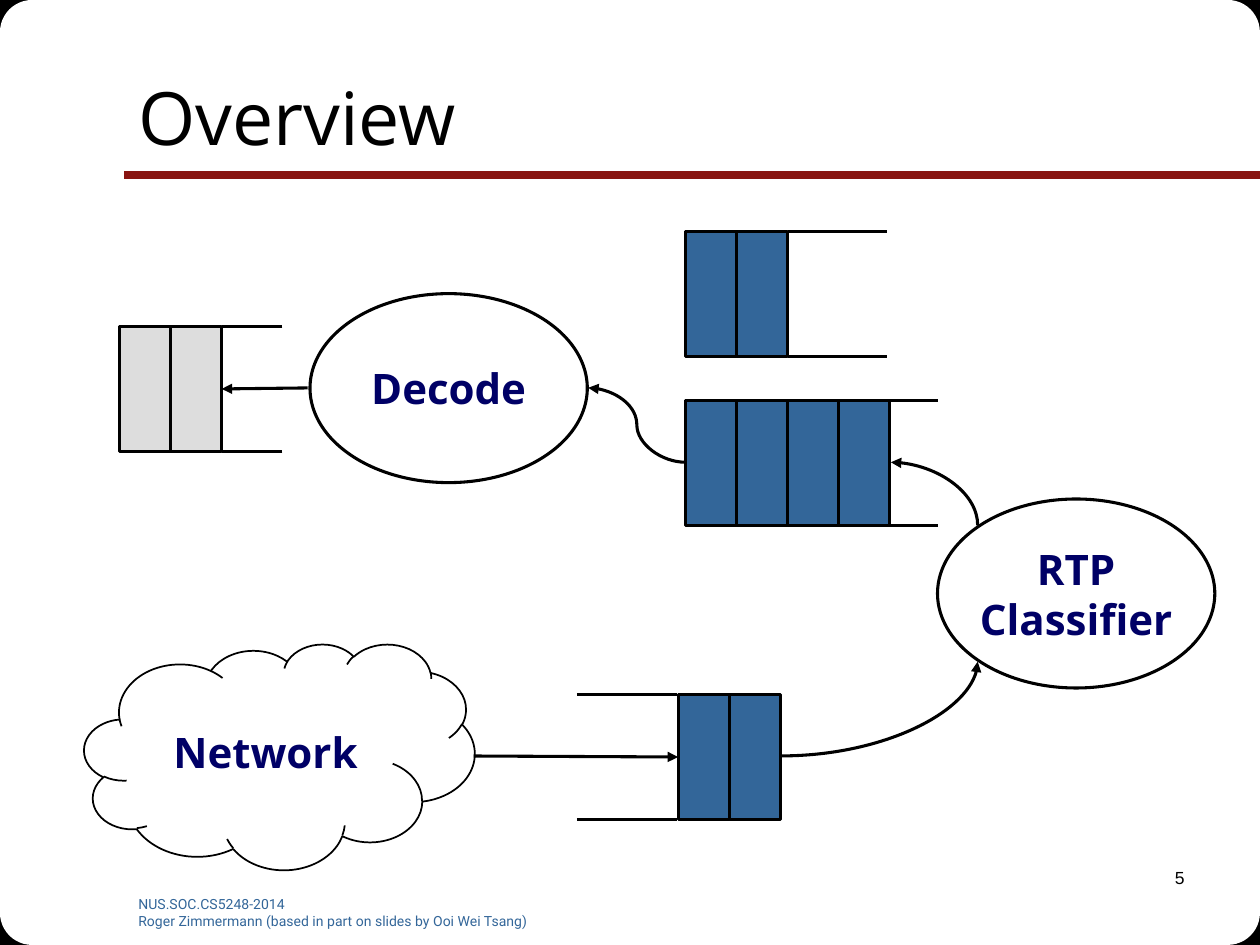
"""Build the overview slide: packets queue from the network to the decoder."""
from itertools import product

from lxml import etree
from pptx import Presentation
from pptx.dml.color import RGBColor
from pptx.enum.shapes import MSO_CONNECTOR, MSO_SHAPE
from pptx.enum.text import MSO_ANCHOR, PP_ALIGN
from pptx.oxml.ns import qn
from pptx.util import Cm, Pt

STRAIGHT, CURVE = MSO_CONNECTOR.STRAIGHT, MSO_CONNECTOR.CURVE
RECT, ROUND = MSO_SHAPE.RECTANGLE, MSO_SHAPE.ROUNDED_RECTANGLE
OVAL, CLOUD = MSO_SHAPE.OVAL, MSO_SHAPE.CLOUD
LEFT, CENTER, RIGHT = PP_ALIGN.LEFT, PP_ALIGN.CENTER, PP_ALIGN.RIGHT
TOP, MIDDLE = MSO_ANCHOR.TOP, MSO_ANCHOR.MIDDLE
HEX = {"black": "000000", "white": "FFFFFF", "red": "891411",
       "blue": "336699", "navy": "000066", "gray": "DDDDDD"}
COLOR = {name: RGBColor.from_string(code) for name, code in HEX.items()}
WIDE, HIGH = 25.4, 19.05

deck = Presentation()
deck.slide_width, deck.slide_height = Cm(WIDE), Cm(HIGH)
shapes = deck.slides.add_slide(deck.slide_layouts[6]).shapes


def draw(kind, x, y, w, h, fill, weight=1.75):
    shape = shapes.add_shape(kind, Cm(x), Cm(y), Cm(w), Cm(h))
    shape.shadow.inherit = False
    shape.fill.solid()
    shape.fill.fore_color.rgb = COLOR[fill]
    if weight:
        shape.line.color.rgb = COLOR["black"]
        shape.line.width = Pt(weight)
    else:
        shape.line.fill.background()
    return shape


def link(kind, x1, y1, x2, y2, end=None, color="black", weight=1.75):
    wire = shapes.add_connector(kind, Cm(x1), Cm(y1), Cm(x2), Cm(y2))
    wire.line.color.rgb = COLOR[color]
    wire.line.width = Pt(weight)
    if end:
        etree.SubElement(wire.line._ln, qn(f"a:{end}"), type="triangle")
    etree.SubElement(wire._element.spPr, qn("a:effectLst"))
    return wire


for kind, size, fill, weight in ((RECT, 1.1, "black", 0.75), (ROUND, 3.89, "white", 0)):
    for x, y in product((0, WIDE - size), (0, HIGH - size)):
        draw(kind, x, y, size, size, fill, weight)
link(STRAIGHT, WIDE, 3.53, 2.49, 3.53, color="red", weight=4.5)

cell_w, cell_h = 1.03, 2.52
queues = {
    "out": (2.41, 6.58, 2, "gray", 4.47, 5.69),
    "input": (13.67, 14, 2, "blue", 13.64, 11.63),
    "long": (13.82, 8.08, 4, "blue", 16.89, 18.9),
    "short": (13.82, 4.67, 2, "blue", 15.88, 17.88),
}
cells = {}
for name, (x, y, count, fill, near, far) in queues.items():
    for rail in (y, y + cell_h):
        link(STRAIGHT, far, rail, near, rail)
    cells[name] = [draw(RECT, x + i * cell_w, y, cell_w, cell_h, fill)
                   for i in range(count)]

nodes = (
    (CLOUD, 1.7, 12.98, 7.87, 4.55, 1, ["Network"]),
    (OVAL, 18.9, 10.06, 5.59, 3.81, 1.75, ["RTP", "Classifier"]),
    (OVAL, 6.25, 5.92, 5.59, 3.81, 1.75, ["Decode"]),
)
texts = [
    (shapes.add_textbox(Cm(2.54), Cm(0.76), Cm(21.59), Cm(3.18)),
     ["Overview"], "Open Sans", 42, "black", LEFT, MIDDLE),
    (shapes.add_textbox(Cm(2.54), Cm(17.93), Cm(8.69), Cm(0.71)),
     ["NUS.SOC.CS5248-2014",
      "Roger Zimmermann (based in part on slides by Ooi Wei Tsang)"],
     "Roboto", 8, "blue", LEFT, TOP),
    (shapes.add_textbox(Cm(18.85), Cm(17.35), Cm(5.28), Cm(1.27)),
     ["5"], "Arial", 10, "black", RIGHT, TOP),
]
for kind, x, y, w, h, weight, words in nodes:
    node = draw(kind, x, y, w, h, "white", weight)
    texts.append((node, words, "Open Sans", 24, "navy", CENTER, MIDDLE))

for shape, words, face, size, color, align, anchor in texts:
    frame = shape.text_frame
    frame.word_wrap = align != CENTER
    frame.vertical_anchor = anchor
    frame.text = "\n".join(words)
    for para in frame.paragraphs:
        para.alignment = align
        para.font.name, para.font.size = face, Pt(size)
        para.font.bold = align == CENTER
        para.font.color.rgb = COLOR[color]

link(STRAIGHT, 9.55, 15.24, 13.64, 15.24, "tailEnd").end_connect(cells["input"][0], 1)
link(STRAIGHT, 6.2, 7.82, 4.5, 7.82, "tailEnd").end_connect(cells["out"][-1], 3)
link(CURVE, 13.82, 9.32, 11.86, 7.82, "tailEnd")
bends = (
    link(CURVE, 15.75, 15.24, 19.71, 13.34, "tailEnd"),
    link(CURVE, 17.96, 9.32, 19.71, 10.59, "headEnd"),
)
for bend in bends:
    bend._element.spPr.find(qn("a:prstGeom")).set("prst", "curvedConnector2")

deck.save("out.pptx")
